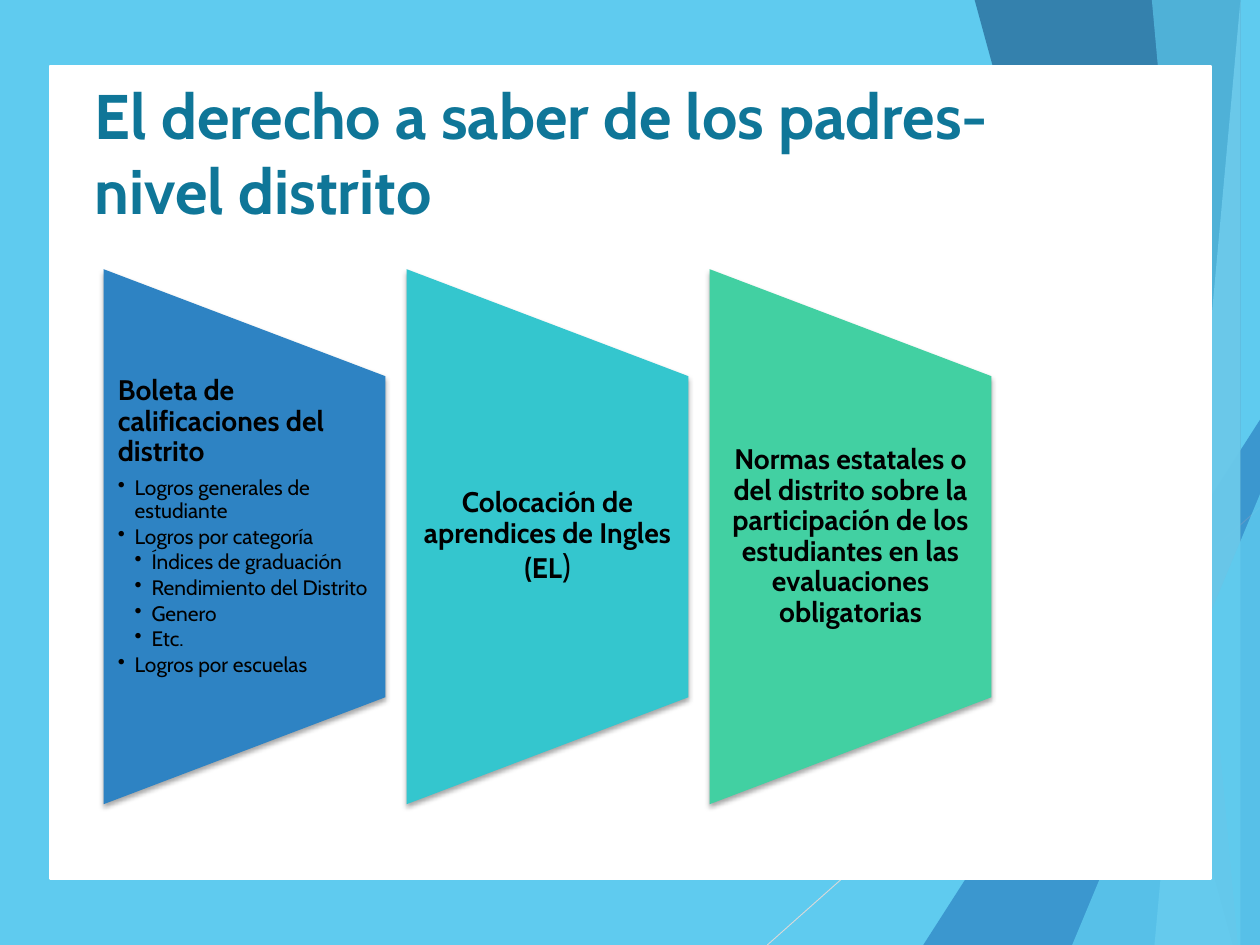
from lxml import etree
from pptx import Presentation
from pptx import util as u
from pptx.dml.color import RGBColor
from pptx.enum import shapes, text
from pptx.oxml.ns import qn

WIDTH, HEIGHT = 14.22, 10.67

THEME = {
    "font": "Cabin",
    "sky": "5FCBEF", "pale": "9FE0F5", "blue": "2E83C3", "navy": "226292",
    "turquoise": "34C6CE", "green": "42D0A2", "grey": "D9D9D9",
    "white": "FFFFFF", "black": "000000", "heading": "0F7698",
    "title_size": 51.2, "head_size": 23, "bullet_size": 17, "bracket_size": 27,
}

TITLE = "El derecho a saber de los padres-nivel distrito"

# Each panel: colour, heading runs, bullets as (level, text)
PANELS = [
    ("blue", [("Boleta de calificaciones del distrito", "head_size", True)], [
        (1, "Logros generales de estudiante"),
        (1, "Logros por categoría"),
        (2, "Índices de graduación"),
        (2, "Rendimiento del Distrito"),
        (2, "Genero"),
        (2, "Etc."),
        (1, "Logros por escuelas"),
    ]),
    ("turquoise", [("Colocación de aprendices de Ingles (EL", "head_size", True),
                   (")", "bracket_size", False)], []),
    ("green", [("Normas estatales o del distrito sobre la participación de los "
                "estudiantes en las evaluaciones obligatorias", "head_size", True)], []),
]

# Facets, back to front. Bands reach the right edge: top left x, bottom left x,
# bottom right x. Corners are triangles: left, top.
FACETS = [
    ("band", (13.1, 10.71, WIDTH), "sky", 30),
    ("band", (11.2, 12.61, WIDTH), "sky", 20),
    ("corner", (10.42, 4.74), "blue", 72),
    ("band", (10.89, 13.77, WIDTH), "navy", 70),
    ("band", (13.9, 12.71, WIDTH), "pale", 70),
    ("band", (12.76, 14.05, WIDTH), "sky", 65),
    ("corner", (12.1, 5.58), "sky", 80),
]

PANEL_LEFT, PANEL_STEP, PANEL_WIDTH = 1.17, 3.42, 3.18
PANEL_TOP, PANEL_HEIGHT = 3.04, 6.04
TEXT_TOP, TEXT_HEIGHT = 4.25, 3.62
INDENT = 0.19


def colour(name):
    return RGBColor.from_string(THEME[name])


def paint(shape, fill, opacity=100, line=None):
    shape.fill.solid()
    shape.fill.fore_color.rgb = colour(fill)
    if opacity < 100:
        tint = shape.fill._xPr.find(qn("a:solidFill"))[0]
        etree.SubElement(tint, qn("a:alpha"), val=str(opacity * 1000))
    if line:
        shape.line.color.rgb = colour(line)
        shape.line.width = u.Pt(1.75)
    else:
        shape.line.fill.background()
    shape.shadow.inherit = False


def add_preset(page, kind, left, top, width, height, **look):
    shape = page.shapes.add_shape(kind, *map(u.Inches, (left, top, width, height)))
    paint(shape, **look)
    return shape


def add_band(page, top_x, bottom_x, right_x, **look):
    builder = page.shapes.build_freeform(top_x, 0, scale=u.Inches(1))
    builder.add_line_segments(
        [(WIDTH, 0), (right_x, HEIGHT), (bottom_x, HEIGHT)], close=True)
    paint(builder.convert_to_shape(), **look)


def add_corner(page, left, top, **look):
    corner = add_preset(page, shapes.MSO_SHAPE.ISOSCELES_TRIANGLE,
                        left, top, WIDTH - left, HEIGHT - top, **look)
    corner.adjustments[0] = 1


def add_box(page, left, top, width, height, inset=None, anchor=text.MSO_ANCHOR.TOP):
    box = page.shapes.add_textbox(*map(u.Inches, (left, top, width, height)))
    frame = box.text_frame
    frame.word_wrap = True
    frame.vertical_anchor = anchor
    if inset is not None:
        frame.margin_left = frame.margin_right = u.Inches(inset)
        frame.margin_top = frame.margin_bottom = 0
    return frame


def add_text(para, words, size="head_size", bold=False, ink="black"):
    span = para.add_run()
    span.text = words
    span.font.name = THEME["font"]
    span.font.size = u.Pt(THEME[size])
    span.font.bold = bold
    span.font.color.rgb = colour(ink)


def add_bullet(para, level):
    para.level = level
    props = para._p.get_or_add_pPr()
    props.set("marL", str(u.Inches(INDENT * level)))
    props.set("indent", str(-u.Inches(INDENT)))
    etree.SubElement(props, qn("a:buChar"), char="•")


def drop_shadow(shape):
    effects = shape._element.spPr.find(qn("a:effectLst"))
    shadow = etree.SubElement(
        effects, qn("a:outerShdw"), blurRad=str(u.Pt(4)), dist=str(u.Pt(3)),
        dir="5400000", rotWithShape="0")
    tint = etree.SubElement(shadow, qn("a:srgbClr"), val=THEME["black"])
    etree.SubElement(tint, qn("a:alpha"), val="35000")


def add_panel(page, left, fill, heading, bullets):
    # The preset is wide before its quarter turn, so its frame is centred on the panel
    shift = (PANEL_HEIGHT - PANEL_WIDTH) / 2
    panel = add_preset(page, shapes.MSO_SHAPE.FLOWCHART_MANUAL_OPERATION,
                       left - shift, PANEL_TOP + shift, PANEL_HEIGHT, PANEL_WIDTH, fill=fill)
    panel.rotation = 270
    drop_shadow(panel)

    anchor = text.MSO_ANCHOR.TOP if bullets else text.MSO_ANCHOR.MIDDLE
    frame = add_box(page, left, TEXT_TOP, PANEL_WIDTH, TEXT_HEIGHT, inset=0.16, anchor=anchor)
    para = frame.paragraphs[0]
    para.line_spacing = 0.9
    para.space_after = u.Pt(8)
    para.alignment = text.PP_ALIGN.LEFT if bullets else text.PP_ALIGN.CENTER
    for words, size, bold in heading:
        add_text(para, words, size=size, bold=bold)
    for level, words in bullets:
        para = frame.add_paragraph()
        para.line_spacing = 0.9
        para.space_after = u.Pt(2.5)
        add_bullet(para, level)
        add_text(para, words, size="bullet_size")


def add_backdrop(page):
    add_preset(page, shapes.MSO_SHAPE.RECTANGLE, 0, 0, WIDTH, HEIGHT, fill="sky")
    ray = page.shapes.add_connector(
        shapes.MSO_CONNECTOR.STRAIGHT, *map(u.Inches, (WIDTH, 5.73, 8.66, HEIGHT)))
    ray.line.color.rgb = colour("grey")
    ray.line.width = u.Pt(0.75)
    etree.SubElement(ray._element.spPr, qn("a:effectLst"))
    for kind, place, fill, opacity in FACETS:
        add_facet = add_band if kind == "band" else add_corner
        add_facet(page, *place, fill=fill, opacity=opacity)
    add_preset(page, shapes.MSO_SHAPE.RECTANGLE, 0.56, 0.75, 13.11, 9.17,
               fill="white", line="white")


def main():
    deck = Presentation()
    deck.slide_width, deck.slide_height = u.Inches(WIDTH), u.Inches(HEIGHT)
    page = deck.slides.add_slide(deck.slide_layouts[6])
    add_backdrop(page)
    title = add_box(page, 0.97, 0.81, 11.24, 2.05)
    add_text(title.paragraphs[0], TITLE, size="title_size", bold=True, ink="heading")
    for index, panel in enumerate(PANELS):
        add_panel(page, PANEL_LEFT + index * PANEL_STEP, *panel)
    deck.save("out.pptx")


if __name__ == "__main__":
    main()
